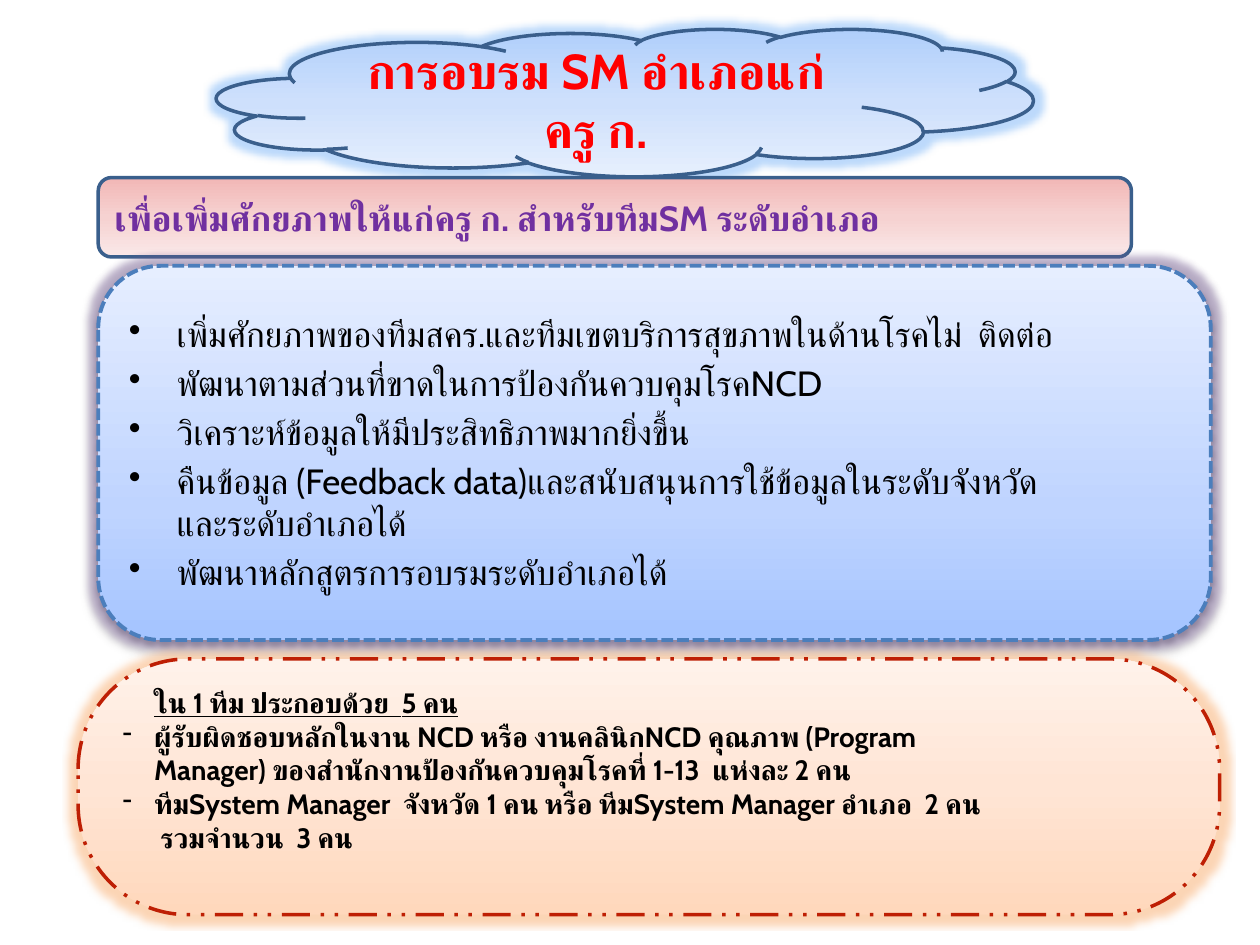
from lxml import etree
from pptx import Presentation
from pptx.dml.color import RGBColor
from pptx.enum.dml import MSO_LINE
from pptx.enum.shapes import MSO_SHAPE
from pptx.enum.text import MSO_ANCHOR, PP_ALIGN
from pptx.oxml.ns import qn
from pptx.util import Inches, Pt

CLOUD, ROUND = MSO_SHAPE.CLOUD, MSO_SHAPE.ROUNDED_RECTANGLE
LEFT, CENTER = PP_ALIGN.LEFT, PP_ALIGN.CENTER
MIDDLE = MSO_ANCHOR.MIDDLE
SYS_DASH, DASH_DOT_DOT = MSO_LINE.SQUARE_DOT, MSO_LINE.DASH_DOT_DOT

FONT = "Cabin"
BLACK = RGBColor(0x00, 0x00, 0x00)
RED = RGBColor(0xFF, 0x00, 0x00)
PURPLE = RGBColor(0x70, 0x30, 0xA0)
NAVY = RGBColor(0x3A, 0x5F, 0x8C)
BLUE = RGBColor(0x4B, 0x7E, 0xBC)
RUST = RGBColor(0xBE, 0x1F, 0x04)
GLOW_BLUE = RGBColor(0x5A, 0xA2, 0xF5)
GLOW_PURPLE = RGBColor(0x80, 0x64, 0xA2)
GLOW_ORANGE = RGBColor(0xF7, 0x96, 0x46)


def stops(*pairs):
    return [(pos, RGBColor.from_string(rgb)) for pos, rgb in pairs]


CLOUD_FILL = stops((0, "B0CFFB"), (50, "CEE0FC"), (100, "E6EFFD"))
PINK_FILL = stops((0, "F2B7B6"), (50, "F6D2D1"), (100, "FAE8E8"))
BLUE_FILL = stops((0, "A4C4FF"), (35, "BFD4FF"), (100, "E6EEFF"))
ORANGE_FILL = stops((0, "FFD8BC"), (50, "FFE5D5"), (100, "FFF2EA"))

TITLE = "การอบรม SM อำเภอแก่ครู ก."
PURPOSE = "เพื่อเพิ่มศักยภาพให้แก่ครู ก. สำหรับทีมSM ระดับอำเภอ"
GOALS = [
    "เพิ่มศักยภาพของทีมสคร.และทีมเขตบริการสุขภาพในด้านโรคไม่  ติดต่อ",
    "พัฒนาตามส่วนที่ขาดในการป้องกันควบคุมโรคNCD",
    "วิเคราะห์ข้อมูลให้มีประสิทธิภาพมากยิ่งขึ้น",
    "คืนข้อมูล (Feedback data)และสนับสนุนการใช้ข้อมูลในระดับจังหวัด\vและระดับอำเภอได้",
    "พัฒนาหลักสูตรการอบรมระดับอำเภอได้",
]
TEAM = [
    ("ใน 1 ทีม ประกอบด้วย  5 คน", dict(underline=True, margin=0.25)),
    ("ผู้รับผิดชอบหลักในงาน NCD หรือ งานคลินิกNCD คุณภาพ (Program\v"
     "Manager) ของสำนักงานป้องกันควบคุมโรคที่ 1-13  แห่งละ 2 คน",
     dict(bullet="-", margin=0.25)),
    ("ทีมSystem Manager  จังหวัด 1 คน หรือ ทีมSystem Manager อำเภอ  2 คน",
     dict(bullet="-", margin=0.25)),
    ("รวมจำนวน  3 คน", dict(margin=0.3)),
]


def add(parent, tag, **attrs):
    return etree.SubElement(parent, qn(tag), {k: str(v) for k, v in attrs.items()})


def add_color(parent, rgb, alpha=100):
    clr = add(parent, "a:srgbClr", val=rgb)
    if alpha < 100:
        add(clr, "a:alpha", val=alpha * 1000)


def add_panel(slide, kind, box, colors, angle, line, width, dash=None, glow=None, shadow=False):
    sp = slide.shapes.add_shape(kind, *map(Inches, box))
    sp.fill.gradient()
    grad = sp._element.spPr.find(qn("a:gradFill"))
    gs_list = grad.find(qn("a:gsLst"))
    for gs in list(gs_list):
        gs_list.remove(gs)
    for pos, rgb in colors:
        add_color(add(gs_list, "a:gs", pos=pos * 1000), rgb)
    grad.find(qn("a:lin")).set("ang", str(angle * 60000))
    sp.line.color.rgb = line
    sp.line.width = Pt(width)
    if dash:
        sp.line.dash_style = dash
    sp.shadow.inherit = False
    effects = sp._element.spPr.find(qn("a:effectLst"))
    if glow:
        add_color(add(effects, "a:glow", rad=Pt(8)), glow, 40)
    if shadow:
        outer = add(effects, "a:outerShdw", blurRad=Pt(3.1), dist=Pt(1.6),
                    dir=5400000, rotWithShape=0)
        add_color(outer, BLACK, 38)
    tf = sp.text_frame
    tf.word_wrap = True
    tf.vertical_anchor = MIDDLE
    return tf


def add_text(tf, text, size, color=BLACK, bold=False, underline=False,
             align=LEFT, bullet=None, margin=0, before=0):
    p = tf.paragraphs[0] if not tf.paragraphs[0].runs else tf.add_paragraph()
    p.text = text
    p.alignment = align
    p.space_before = Pt(before)
    pPr = p._p.get_or_add_pPr()
    pPr.set("marL", str(Inches(margin)))
    pPr.set("indent", str(-Inches(margin) if bullet else 0))
    if bullet:
        add(pPr, "a:buChar", char=bullet)
    for r in p.runs:
        r.font.name = FONT
        r.font.size = Pt(size)
        r.font.bold = bold
        r.font.underline = underline
        r.font.color.rgb = color
        add(r._r.get_or_add_rPr(), "a:cs", typeface=FONT)


def main():
    prs = Presentation()
    prs.slide_width, prs.slide_height = Inches(10), Inches(7.5)
    slide = prs.slides.add_slide(prs.slide_layouts[6])

    tf = add_panel(slide, CLOUD, (1.72, 0.23, 6.48, 1.17), CLOUD_FILL, 90, NAVY, 2,
                   glow=GLOW_BLUE)
    add_text(tf, TITLE, 28, RED, bold=True, align=CENTER)

    tf = add_panel(slide, ROUND, (0.78, 1.41, 8.2, 0.63), PINK_FILL, 90, NAVY, 2)
    add_text(tf, PURPOSE, 20, PURPLE, bold=True)

    tf = add_panel(slide, ROUND, (0.78, 2.11, 8.83, 2.97), BLUE_FILL, 270, BLUE, 2.25,
                   dash=SYS_DASH, glow=GLOW_PURPLE, shadow=True)
    for goal in GOALS:
        add_text(tf, goal, 20, bullet="•", margin=0.38, before=4)

    tf = add_panel(slide, ROUND, (0.62, 5.23, 9.06, 2.03), ORANGE_FILL, 270, RUST, 2,
                   dash=DASH_DOT_DOT, glow=GLOW_ORANGE)
    slide.shapes[-1].adjustments[0] = 0.43
    tf.margin_bottom = Inches(0.32)
    for text, style in TEAM:
        add_text(tf, text, 16, bold=True, **style)

    prs.save("out.pptx")


if __name__ == "__main__":
    main()
